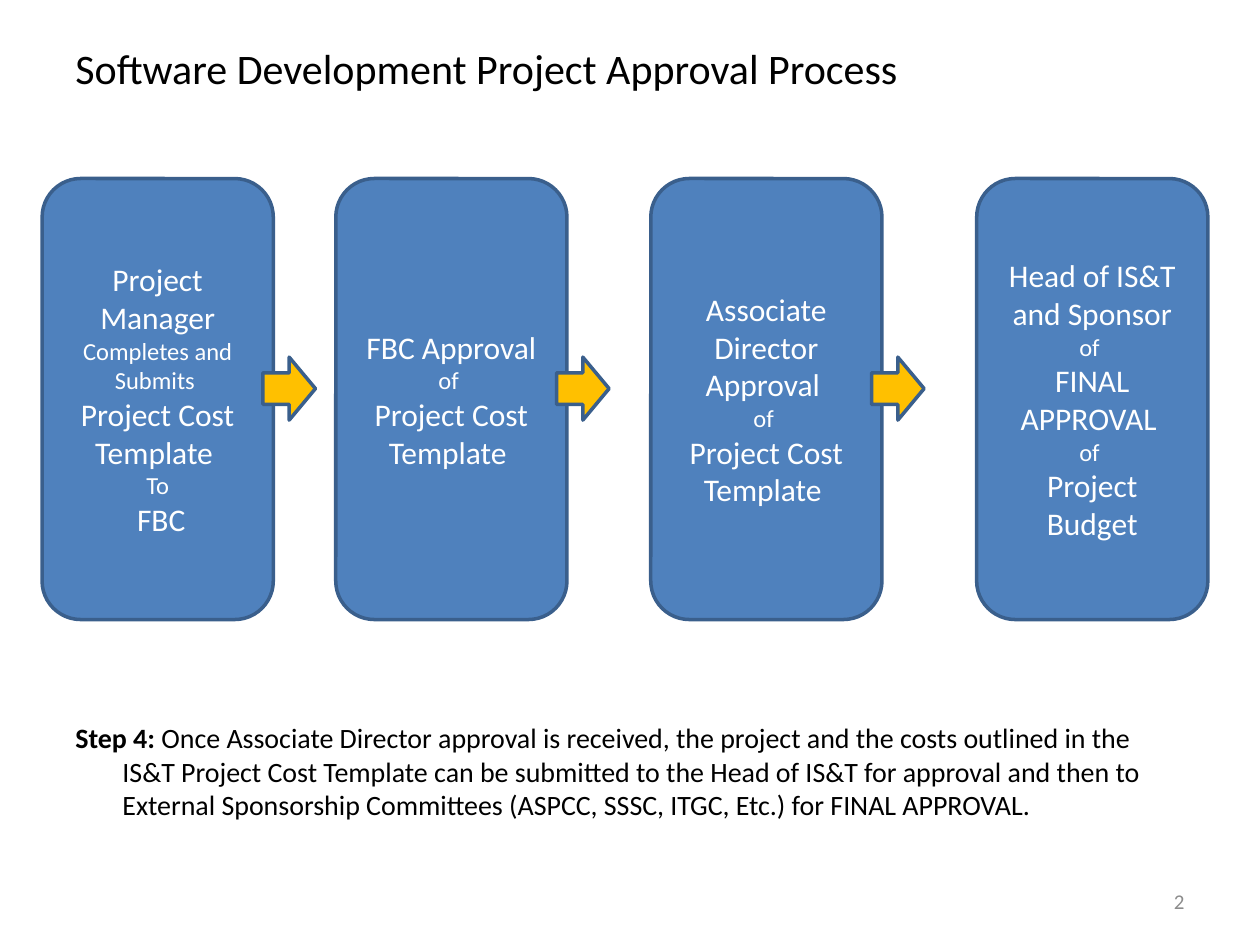
import dataclasses

import pptx
import pptx.dml.color
import pptx.enum.shapes
import pptx.enum.text
import pptx.util

Cm = pptx.util.Cm
Pt = pptx.util.Pt
Align = pptx.enum.text.PP_ALIGN
Anchor = pptx.enum.text.MSO_ANCHOR
Preset = pptx.enum.shapes.MSO_SHAPE


@dataclasses.dataclass(frozen=True)
class Theme:
    font: str = "Calibri"
    text: str = "000000"
    step_text: str = "FFFFFF"
    step_fill: str = "4F81BD"
    arrow_fill: str = "FFC000"
    outline: str = "3A5F8C"
    page_number: str = "8C8C8C"
    title_size: int = 24
    major_size: int = 18
    body_size: int = 16
    minor_size: int = 14
    page_number_size: int = 12
    outline_width: int = 2


THEME = Theme()
MAJOR, MINOR = THEME.major_size, THEME.minor_size

# Step boxes and the arrows that overlap their right edges, in centimetres
STEP_TOP, STEP_WIDTH, STEP_HEIGHT = 3.6, 4.66, 8.89
ARROW_TOP, ARROW_WIDTH, ARROW_HEIGHT = 7.2, 1.06, 1.27
ARROW_OVERLAP = 0.21

# Each step: left edge, then paragraphs made of (text, size) runs
STEPS = [
    (0.85, [[("Project Manager ", MAJOR), ("Completes and Submits ", MINOR)],
            [("Project Cost Template ", MAJOR)],
            [("To", MINOR)],
            [(" FBC", MAJOR)]]),
    (6.77, [[("FBC Approval ", MAJOR), ("of ", MINOR)],
            [("Project Cost Template ", MAJOR)]]),
    (13.12, [[("Associate Director Approval ", MAJOR)],
             [("of ", MINOR)],
             [("Project Cost Template ", MAJOR)]]),
    (19.69, [[("Head of IS&T and Sponsor", MAJOR)],
             [("of ", MINOR)],
             [("FINAL APPROVAL ", MAJOR)],
             [("of ", MINOR)],
             [("Project Budget", MAJOR)]]),
]


def rgb(value):
    return pptx.dml.color.RGBColor.from_string(value)


def add_text(paragraph, text, *, size, color=THEME.text, bold=False):
    run = paragraph.add_run()
    run.text = text
    run.font.name = THEME.font
    run.font.size = Pt(size)
    run.font.bold = bold
    run.font.color.rgb = rgb(color)


def add_text_box(slide, left, top, width, height, anchor=Anchor.MIDDLE):
    """Add a wrapping text box and return its first paragraph."""
    frame = slide.shapes.add_textbox(Cm(left), Cm(top), Cm(width), Cm(height)).text_frame
    frame.word_wrap = True
    frame.vertical_anchor = anchor
    return frame.paragraphs[0]


def add_outlined_shape(slide, preset, left, top, width, height, fill):
    shape = slide.shapes.add_shape(preset, Cm(left), Cm(top), Cm(width), Cm(height))
    shape.shadow.inherit = False
    shape.fill.solid()
    shape.fill.fore_color.rgb = rgb(fill)
    shape.line.color.rgb = rgb(THEME.outline)
    shape.line.width = Pt(THEME.outline_width)
    return shape


def add_step(slide, left, paragraphs):
    shape = add_outlined_shape(slide, Preset.ROUNDED_RECTANGLE, left, STEP_TOP,
                               STEP_WIDTH, STEP_HEIGHT, THEME.step_fill)
    frame = shape.text_frame
    frame.word_wrap = True
    frame.vertical_anchor = Anchor.MIDDLE
    for index, runs in enumerate(paragraphs):
        paragraph = frame.add_paragraph() if index else frame.paragraphs[0]
        paragraph.alignment = Align.CENTER
        for text, size in runs:
            add_text(paragraph, text, size=size, color=THEME.step_text)


def add_arrow(slide, step_left):
    add_outlined_shape(slide, Preset.RIGHT_ARROW, step_left + STEP_WIDTH - ARROW_OVERLAP,
                       ARROW_TOP, ARROW_WIDTH, ARROW_HEIGHT, THEME.arrow_fill)


def add_explanation(slide):
    paragraph = add_text_box(slide, 1.27, 14.4, 22.86, 2.62, Anchor.TOP)
    paragraph.space_before = Pt(0.2 * THEME.body_size)
    # Hanging indent
    properties = paragraph._p.get_or_add_pPr()
    properties.set("marL", str(Cm(0.95)))
    properties.set("indent", str(-Cm(0.95)))
    add_text(paragraph, "Step 4: ", size=THEME.body_size, bold=True)
    add_text(paragraph,
             "Once Associate Director approval is received, the project and the costs "
             "outlined in the IS&T Project Cost Template can be submitted to the Head of "
             "IS&T for approval and then to External Sponsorship Committees (ASPCC, SSSC, "
             "ITGC, Etc.) for FINAL APPROVAL.",
             size=THEME.body_size)


def main():
    presentation = pptx.Presentation()
    presentation.slide_width, presentation.slide_height = Cm(25.4), Cm(19.05)
    slide = presentation.slides.add_slide(presentation.slide_layouts[6])

    # Title
    title = add_text_box(slide, 1.27, 0.64, 22.86, 1.47)
    add_text(title, "Software Development Project Approval Process", size=THEME.title_size)

    # Approval steps, with an arrow after all but the last
    for index, (left, paragraphs) in enumerate(STEPS, start=1):
        add_step(slide, left, paragraphs)
        if index < len(STEPS):
            add_arrow(slide, left)

    # Explanation and page number
    add_explanation(slide)
    page_number = add_text_box(slide, 18.2, 17.66, 5.93, 1.01)
    page_number.alignment = Align.RIGHT
    add_text(page_number, "2", size=THEME.page_number_size, color=THEME.page_number)

    presentation.save("out.pptx")


if __name__ == "__main__":
    main()
